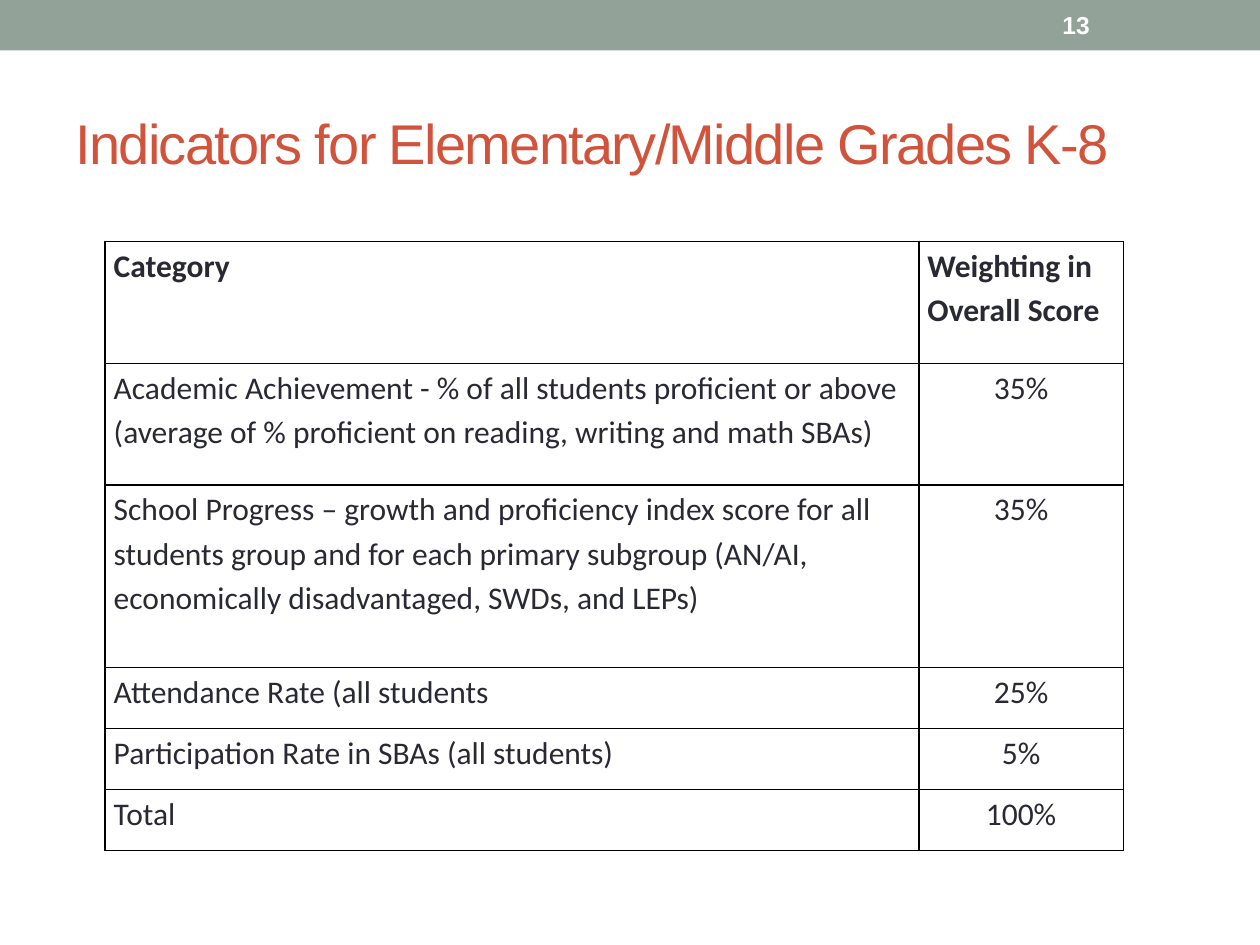
from lxml import etree
from pptx import Presentation
from pptx.dml.color import RGBColor
from pptx.enum.shapes import MSO_SHAPE
from pptx.enum.text import MSO_ANCHOR, PP_ALIGN
from pptx.oxml.ns import qn
from pptx.util import Pt

LEFT, CENTER = PP_ALIGN.LEFT, PP_ALIGN.CENTER
MIDDLE = MSO_ANCHOR.MIDDLE
SAGE = RGBColor(0x93, 0xA2, 0x99)
RUST = RGBColor(0xD2, 0x53, 0x3C)
INK = RGBColor(0x29, 0x29, 0x34)
WHITE = RGBColor(0xFF, 0xFF, 0xFF)
BORDER = "000000"

TITLE = "Indicators for Elementary/Middle Grades K-8"
PAGE = "13"
# category, weighting, row height in units
ROWS = [
    ("Category", "Weighting in Overall Score", 2),
    ("Academic Achievement - % of all students proficient or above "
     "(average of % proficient on reading, writing and math SBAs)", "35%", 2),
    ("School Progress – growth and proficiency index score for all students "
     "group and for each primary subgroup (AN/AI, economically disadvantaged, "
     "SWDs, and LEPs)", "35%", 3),
    ("Attendance Rate (all students", "25%", 1),
    ("Participation Rate in SBAs (all students)", "5%", 1),
    ("Total", "100%", 1),
]
COL_WIDTHS = (465, 117)
ROW_UNIT = 34.8

TITLE_FONT = {"name": "Arial", "size": Pt(32)}
PAGE_FONT = {"name": "Arial", "size": Pt(14), "bold": True}
CELL_FONT = {"name": "Calibri", "size": Pt(18)}
CELL_MARGINS = {"margin_left": Pt(5), "margin_right": Pt(5),
                "margin_top": 0, "margin_bottom": 0}


def set_attrs(obj, values):
    for name, value in values.items():
        setattr(obj, name, value)


def write(tf, text, font, color):
    p = tf.paragraphs[0]
    r = p.add_run()
    r.text = text
    set_attrs(r.font, font)
    r.font.color.rgb = color
    return p, r


def add_text(s, box, text, font, color):
    tf = s.shapes.add_textbox(*map(Pt, box)).text_frame
    tf.word_wrap = True
    tf.vertical_anchor = MIDDLE
    return write(tf, text, font, color)


def add_borders(cell):
    tcPr = cell._tc.get_or_add_tcPr()
    for side in ("a:lnL", "a:lnR", "a:lnT", "a:lnB"):
        ln = etree.SubElement(tcPr, qn(side), w=str(Pt(1)))
        fill = etree.SubElement(ln, qn("a:solidFill"))
        etree.SubElement(fill, qn("a:srgbClr"), val=BORDER)


def add_weight_table(s):
    height = ROW_UNIT * sum(row[2] for row in ROWS)
    table = s.shapes.add_table(len(ROWS), len(COL_WIDTHS), Pt(60), Pt(138),
                               Pt(sum(COL_WIDTHS)), Pt(height)).table
    table.first_row = table.horz_banding = False
    for col, width in zip(table.columns, COL_WIDTHS):
        col.width = Pt(width)
    for i, (category, weight, units) in enumerate(ROWS):
        table.rows[i].height = Pt(ROW_UNIT * units)
        for j, text in enumerate((category, weight)):
            cell = table.cell(i, j)
            set_attrs(cell, CELL_MARGINS)
            add_borders(cell)
            cell.fill.background()
            p, r = write(cell.text_frame, text, CELL_FONT, INK)
            r.font.bold = i == 0
            p.line_spacing = 1.15
            p.alignment = CENTER if i and j else LEFT


def main():
    prs = Presentation()
    prs.slide_width, prs.slide_height = Pt(720), Pt(540)
    s = prs.slides.add_slide(prs.slide_layouts[6])

    band = s.shapes.add_shape(MSO_SHAPE.RECTANGLE, 0, 0, prs.slide_width, Pt(28.8))
    band.shadow.inherit = False
    band.fill.solid()
    band.fill.fore_color.rgb = SAGE
    band.line.fill.background()

    _, r = add_text(s, (36, 42, 648, 78), TITLE, TITLE_FONT, RUST)
    r.font._element.set("spc", "-100")
    add_text(s, (600, 1.4, 84, 26), PAGE, PAGE_FONT, WHITE)
    add_weight_table(s)
    prs.save("out.pptx")


if __name__ == "__main__":
    main()
